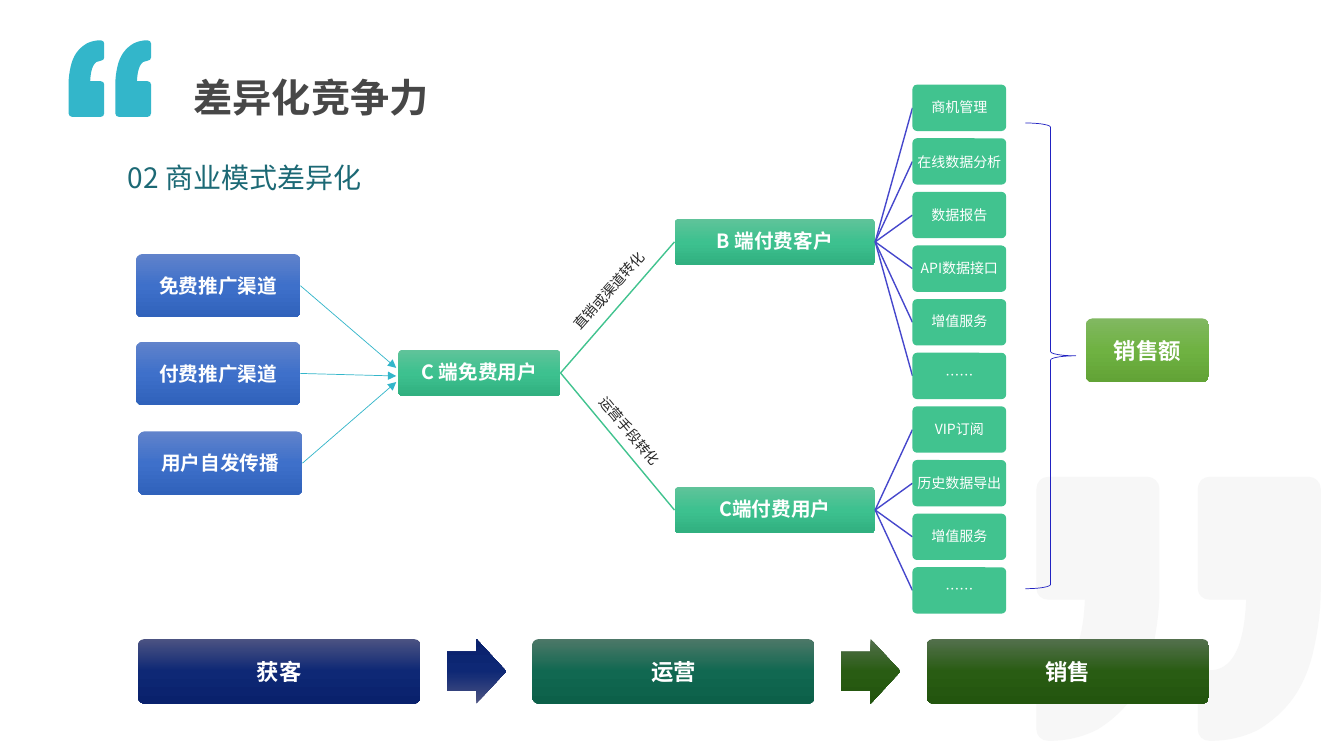
from copy import deepcopy
from dataclasses import dataclass
from math import atan2, degrees, hypot

from lxml import etree
from pptx import Presentation
from pptx.dml.color import RGBColor
from pptx.enum.shapes import MSO_CONNECTOR, MSO_SHAPE
from pptx.enum.text import MSO_ANCHOR, PP_ALIGN
from pptx.oxml.ns import qn
from pptx.util import Inches, Pt

ROUNDED = MSO_SHAPE.ROUNDED_RECTANGLE
ARROW = MSO_SHAPE.RIGHT_ARROW
BRACE = MSO_SHAPE.RIGHT_BRACE
STRAIGHT = MSO_CONNECTOR.STRAIGHT
CENTER, LEFT = PP_ALIGN.CENTER, PP_ALIGN.LEFT
MIDDLE, TOP = MSO_ANCHOR.MIDDLE, MSO_ANCHOR.TOP

FONT = "Noto Sans CJK SC"
WHITE, TEAL, GREEN, VIOLET = "FFFFFF", "33B6CA", "41C38F", "4647CC"
GREEN_FADE = ("60C39A", "3DC18F", "31B080")
BLUE_FADE = ("6183CB", "3E70CA", "3062BB")
LIME_FADE = ("81B861", "6FB242", "62A336")
NAVY_FADE = ("4C5382", "0E2875", "09216C")
PINE_FADE = ("4D7868", "116851", "0C6049")
MOSS_FADE = ("53704D", "295C13", "23550E")

MARK_START = (0.12, 1.92)
MARK_SEGMENTS = (
    ((0.05, 1.92), (0, 1.97), (0, 2.03)),
    ((0, 2.51),),
    ((0, 2.57), (0.05, 2.62), (0.12, 2.62)),
    ((0.3, 2.62), (0.46, 2.58), (0.6, 2.51)),
    ((0.73, 2.43), (0.85, 2.33), (0.95, 2.19)),
    ((1.04, 2.06), (1.11, 1.9), (1.15, 1.71)),
    ((1.19, 1.53), (1.22, 1.33), (1.22, 1.11)),
    ((1.22, 0.12),),
    ((1.22, 0.05), (1.16, 0), (1.1, 0)),
    ((0.12, 0),),
    ((0.05, 0), (0, 0.05), (0, 0.12)),
    ((0, 1.11),),
    ((0, 1.17), (0.05, 1.22), (0.12, 1.22)),
    ((0.48, 1.22),),
    ((0.46, 1.69), (0.34, 1.92), MARK_START),
)
QUOTE_WIDTH, QUOTE_HEIGHT, MARK_STEP = 2.82, 2.62, 1.6
BRANCH_HEIGHT = 0.02


@dataclass(frozen=True)
class Block:
    text: str
    left: float
    top: float
    width: float
    height: float
    fill: str | tuple[str, str, str]
    size: int = 14
    bold: bool = True
    inset: float = 0.07
    spacing: float = 1.0

    @property
    def middle(self) -> float:
        return self.top + self.height / 2

    @property
    def entry(self) -> tuple[float, float]:
        return self.left, self.middle

    @property
    def outlet(self) -> tuple[float, float]:
        return self.left + self.width, self.middle


def color(value: str) -> RGBColor:
    return RGBColor.from_string(value)


def write(shape, text: str, *, size: int, fill: str, bold: bool = False, font: str = FONT,
          align=CENTER, anchor=MIDDLE, insets=(0.07, 0.07), spacing: float = 1.0) -> None:
    frame = shape.text_frame
    frame.word_wrap = True
    frame.vertical_anchor = anchor
    frame.margin_left = frame.margin_right = Inches(insets[0])
    frame.margin_top = frame.margin_bottom = Inches(insets[1])
    para = frame.paragraphs[0]
    para.alignment = align
    para.line_spacing = spacing
    para.space_before = Pt(0)
    span = para.add_run()
    span.text = text
    span.font.size = Pt(size)
    span.font.bold = bold
    span.font.color.rgb = color(fill)
    span.font.name = font
    latin = span.font._element.find(qn("a:latin"))
    latin.addnext(etree.Element(qn("a:ea"), typeface=font))


def paint(shape, fill: str | tuple[str, str, str]) -> None:
    shape.shadow.inherit = False
    shape.line.fill.background()
    if isinstance(fill, str):
        shape.fill.solid()
        shape.fill.fore_color.rgb = color(fill)
        return
    shape.fill.gradient()
    shape.fill.gradient_angle = 270
    stops = shape._element.spPr.find(".//" + qn("a:gsLst"))
    stops.insert(1, deepcopy(stops[0]))
    for stop, value, position in zip(shape.fill.gradient_stops, fill, (0, 0.5, 1)):
        stop.color.rgb = color(value)
        stop.position = position


def outline(shape, stroke: str, width: float) -> None:
    shape.shadow.inherit = False
    shape.fill.background()
    shape.line.color.rgb = color(stroke)
    shape.line.width = Pt(width)


def add_block(page, block: Block) -> None:
    box = page.shapes.add_shape(ROUNDED, Inches(block.left), Inches(block.top),
                                Inches(block.width), Inches(block.height))
    box.adjustments[0] = 0.1
    paint(box, block.fill)
    write(box, block.text, size=block.size, fill=WHITE, bold=block.bold,
          insets=(block.inset, block.inset), spacing=block.spacing)


def add_branch(page, start: tuple[float, float], end: tuple[float, float], stroke: str) -> None:
    across, down = end[0] - start[0], end[1] - start[1]
    length = hypot(across, down)
    left, middle = (start[0] + end[0] - length) / 2, (start[1] + end[1]) / 2
    builder = page.shapes.build_freeform(Inches(left), Inches(middle), scale=1.0)
    builder.add_line_segments([(Inches(left + length), Inches(middle))], close=False)
    branch = builder.convert_to_shape()
    branch.top, branch.height = Inches(middle - BRANCH_HEIGHT / 2), Inches(BRANCH_HEIGHT)
    branch._element.spPr.find(".//" + qn("a:path")).set("h", str(Inches(BRANCH_HEIGHT)))
    for point in branch._element.spPr.iter(qn("a:pt")):
        point.set("y", str(Inches(BRANCH_HEIGHT / 2)))
    branch.rotation = degrees(atan2(down, across))
    outline(branch, stroke, 1)


def add_pointer(page, start: tuple[float, float], end: tuple[float, float]) -> None:
    line = page.shapes.add_connector(STRAIGHT, *map(Inches, start + end))
    line.line.color.rgb = color(TEAL)
    line.line.width = Pt(0.5)
    properties = line._element.spPr
    etree.SubElement(properties.find(qn("a:ln")), qn("a:tailEnd"), type="triangle")
    etree.SubElement(properties, qn("a:effectLst"))


def add_arrow(page, left: float, fill: tuple[str, str, str], flipped: bool = False) -> None:
    arrow = page.shapes.add_shape(ARROW, Inches(left), Inches(6.34), Inches(0.59), Inches(0.64))
    arrow.adjustments[0] = 0.6
    arrow.adjustments[1] = 0.5
    paint(arrow, fill)
    if flipped:
        arrow._element.spPr.find(qn("a:xfrm")).set("flipV", "1")


def add_quote(page, left: float, top: float, scale: float, fill: str, turned: bool = False) -> None:
    def place(x: float, y: float) -> tuple[int, int]:
        if turned:
            x, y = QUOTE_WIDTH - x, QUOTE_HEIGHT - y
        return Inches(left + x * scale), Inches(top + y * scale)

    points = [MARK_START] + [point for segment in MARK_SEGMENTS for point in segment]
    first, second = ([place(x + shift, y) for x, y in points] for shift in (0, MARK_STEP))
    builder = page.shapes.build_freeform(*first[0], scale=1.0)
    builder.add_line_segments(first[1:], close=True)
    builder.move_to(*second[0])
    builder.add_line_segments(second[1:], close=True)
    quote = builder.convert_to_shape()
    steps = iter(list(quote._element.spPr.iter(qn("a:lnTo"))))
    for segment in MARK_SEGMENTS * 2:
        controls = [next(steps) for _ in segment]
        if len(controls) == 3:
            curve = etree.Element(qn("a:cubicBezTo"))
            controls[0].addprevious(curve)
            for control in controls:
                curve.append(control[0])
                control.getparent().remove(control)
    paint(quote, fill)


def add_label(page, text: str, left: float, top: float, width: float, height: float,
              rotation: float = 0, inset: float = 0, **style) -> None:
    box = page.shapes.add_textbox(Inches(left), Inches(top), Inches(width), Inches(height))
    box.rotation = rotation
    write(box, text, align=LEFT, insets=(0.1, inset), **style)


def main() -> None:
    deck = Presentation()
    deck.slide_width, deck.slide_height = Inches(13.33), Inches(7.5)
    page = deck.slides.add_slide(deck.slide_layouts[5])
    add_quote(page, 0.68, 0.4, 0.29, TEAL, turned=True)
    add_quote(page, 10.28, 4.73, 1, "F7F7F7")

    title = page.shapes.title
    title.left, title.top, title.width, title.height = map(Inches, (1.82, 0.73, 3.97, 0.44))
    write(title, "差异化竞争力", size=28, fill="474747", bold=True, align=LEFT,
          anchor=TOP, insets=(0.1, 0.05), spacing=0.9)
    add_label(page, "02 商业模式差异化", 1.17, 1.58, 4.86, 0.44, size=20, fill="1C6975",
              font="Noto Sans CJK JP", inset=0.05, anchor=TOP, spacing=0.9)

    free_users = Block("C 端免费用户", 3.95, 3.47, 1.61, 0.46, GREEN_FADE, spacing=0.9)
    business = Block("B 端付费客户", 6.69, 2.17, 1.99, 0.46, GREEN_FADE, spacing=0.9)
    consumer = Block("C端付费用户", 6.69, 4.83, 1.99, 0.46, GREEN_FADE, spacing=0.9)
    products = {
        business: ("商机管理", "在线数据分析", "数据报告", "API数据接口", "增值服务", "……"),
        consumer: ("VIP订阅", "历史数据导出", "增值服务", "……"),
    }
    single_spaced = ("在线数据分析", "数据报告", "历史数据导出")
    add_block(page, free_users)
    row = 0
    for customer, names in products.items():
        add_branch(page, free_users.outlet, customer.entry, GREEN)
        add_block(page, customer)
        for name in names:
            product = Block(name, 9.05, 0.84 + 0.532 * row, 0.93, 0.46, GREEN, size=10, bold=False,
                            inset=0.01, spacing=1.0 if name in single_spaced else 0.9)
            add_branch(page, customer.outlet, product.entry, VIOLET)
            add_block(page, product)
            row += 1

    channels = (("免费推广渠道", 1.35, 2.52, 3.65), ("付费推广渠道", 1.35, 3.39, 3.73),
                ("用户自发传播", 1.37, 4.28, 3.79))
    for name, left, top, target in channels:
        channel = Block(name, left, top, 1.63, 0.63, BLUE_FADE)
        add_block(page, channel)
        add_pointer(page, channel.outlet, (3.93, target))

    brace = page.shapes.add_shape(BRACE, Inches(10.17), Inches(1.22), Inches(0.5), Inches(4.62))
    outline(brace, "2122C2", 0.5)
    add_block(page, Block("销售额", 10.77, 3.16, 1.22, 0.63, LIME_FADE, size=16))

    add_label(page, "直销或渠道转化", 5.28, 2.36, 2.2, 0.27, 311.4, size=10, fill="262626")
    add_label(page, "运营手段转化", 5.52, 4.59, 2.2, 0.27, 50.3, size=10, fill="262626")

    stages = (("获客", NAVY_FADE), ("运营", PINE_FADE), ("销售", MOSS_FADE))
    for index, (name, fade) in enumerate(stages):
        add_block(page, Block(name, 1.37 + 3.91 * index, 6.34, 2.8, 0.64, fade, size=16))
    add_arrow(page, 4.43, NAVY_FADE, flipped=True)
    add_arrow(page, 8.34, MOSS_FADE)
    deck.save("out.pptx")


if __name__ == "__main__":
    main()
